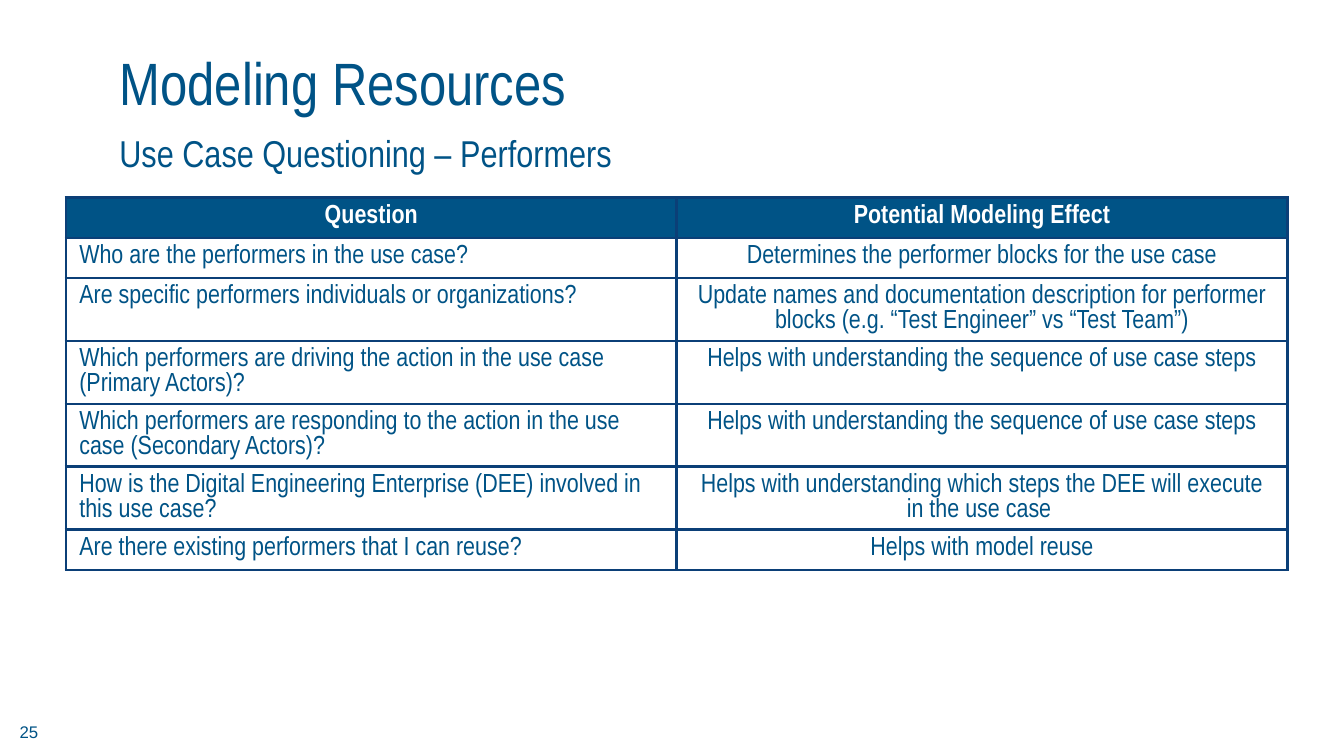
from lxml.etree import SubElement
from pptx import Presentation
from pptx.dml.color import RGBColor
from pptx.enum.text import MSO_ANCHOR as Anchor, PP_ALIGN as Align
from pptx.oxml.ns import qn
from pptx.util import Inches, Pt

COLORS = {"blue": "005386", "white": "FFFFFF", "border": "0B3F77"}
NARROW = "Arial Narrow"
TITLE = "Modeling Resources"
SUBTITLE = "Use Case Questioning – Performers"
PAGE_NUMBER = "25"
HEADERS = ("Question", "Potential Modeling Effect")
SEQUENCE_EFFECT = "Helps with understanding the sequence of use case steps"
QUESTIONS = [
    ("Who are the performers in the use case?",
     "Determines the performer blocks for the use case"),
    ("Are specific performers individuals or organizations?",
     "Update names and documentation description for performer blocks "
     "(e.g. “Test Engineer” vs “Test Team”)"),
    ("Which performers are driving the action in the use case (Primary Actors)?",
     SEQUENCE_EFFECT),
    ("Which performers are responding to the action in the use case (Secondary Actors)?",
     SEQUENCE_EFFECT),
    ("How is the Digital Engineering Enterprise (DEE) involved in this use case?",
     "Helps with understanding which steps the DEE will execute in the use case "),
    ("Are there existing performers that I can reuse?", "Helps with model reuse"),
]

SLIDE_WIDTH = 10
SLIDE_HEIGHT = SLIDE_WIDTH * 9 / 16
TEXT_LEFT, TEXT_WIDTH = 0.79, 8.67
TABLE_LEFT, TABLE_TOP, TABLE_WIDTH, ROW_HEIGHT = 0.49, 1.47, 9.09, 0.3
LINE_PITCH = 13.2


def write(frame, text, size=14, font=NARROW, color="blue", bold=False,
          align=Align.LEFT, anchor=Anchor.TOP, line_spacing=None):
    frame.word_wrap = True
    frame.vertical_anchor = anchor
    paragraph = frame.paragraphs[0]
    paragraph.alignment = align
    if line_spacing:
        paragraph.line_spacing = Pt(line_spacing)
    run = paragraph.add_run()
    run.text = text
    run.font.size = Pt(size)
    run.font.name = font
    run.font.bold = bold
    run.font.color.rgb = RGBColor.from_string(COLORS[color])


def add_borders(cell, width=1.5):
    properties = cell._tc.get_or_add_tcPr()
    for position, side in enumerate(("lnL", "lnR", "lnT", "lnB")):
        line = SubElement(properties, qn(f"a:{side}"), w=str(Pt(width)))
        fill = SubElement(line, qn("a:solidFill"))
        SubElement(fill, qn("a:srgbClr"), val=COLORS["border"])
        properties.insert(position, line)  # borders come before the fill


def add_question_table(slide):
    rows = [HEADERS, *QUESTIONS]
    table = slide.shapes.add_table(
        len(rows), len(HEADERS), Inches(TABLE_LEFT), Inches(TABLE_TOP),
        Inches(TABLE_WIDTH), Inches(ROW_HEIGHT * len(rows))).table
    table.horz_banding = False
    for row_index, row in enumerate(rows):
        is_header = row_index == 0
        for column_index, text in enumerate(row):
            cell = table.cell(row_index, column_index)
            centred = is_header or column_index == 1
            write(cell.text_frame, text, bold=is_header,
                  color="white" if is_header else "blue",
                  align=Align.CENTER if centred else Align.LEFT,
                  line_spacing=LINE_PITCH)
            cell.fill.solid()
            cell.fill.fore_color.rgb = RGBColor.from_string(
                COLORS["blue" if is_header else "white"])
            add_borders(cell)


def main():
    presentation = Presentation()
    presentation.slide_width = Inches(SLIDE_WIDTH)
    presentation.slide_height = Inches(SLIDE_HEIGHT)
    slide = presentation.slides.add_slide(presentation.slide_layouts[5])

    title = slide.shapes.title
    title.left, title.top = Inches(TEXT_LEFT), Inches(0.4)
    title.width, title.height = Inches(TEXT_WIDTH), Inches(0.41)
    write(title.text_frame, TITLE, size=32, anchor=Anchor.MIDDLE)

    subtitle = slide.shapes.add_textbox(
        Inches(TEXT_LEFT), Inches(0.92), Inches(TEXT_WIDTH), Inches(0.43))
    write(subtitle.text_frame, SUBTITLE, size=20)

    add_question_table(slide)

    page_number = slide.shapes.add_textbox(0, Inches(5.25), Inches(0.43), Inches(0.39))
    write(page_number.text_frame, PAGE_NUMBER, size=9, font="Arial",
          align=Align.CENTER, anchor=Anchor.MIDDLE)

    presentation.save("out.pptx")


if __name__ == "__main__":
    main()
